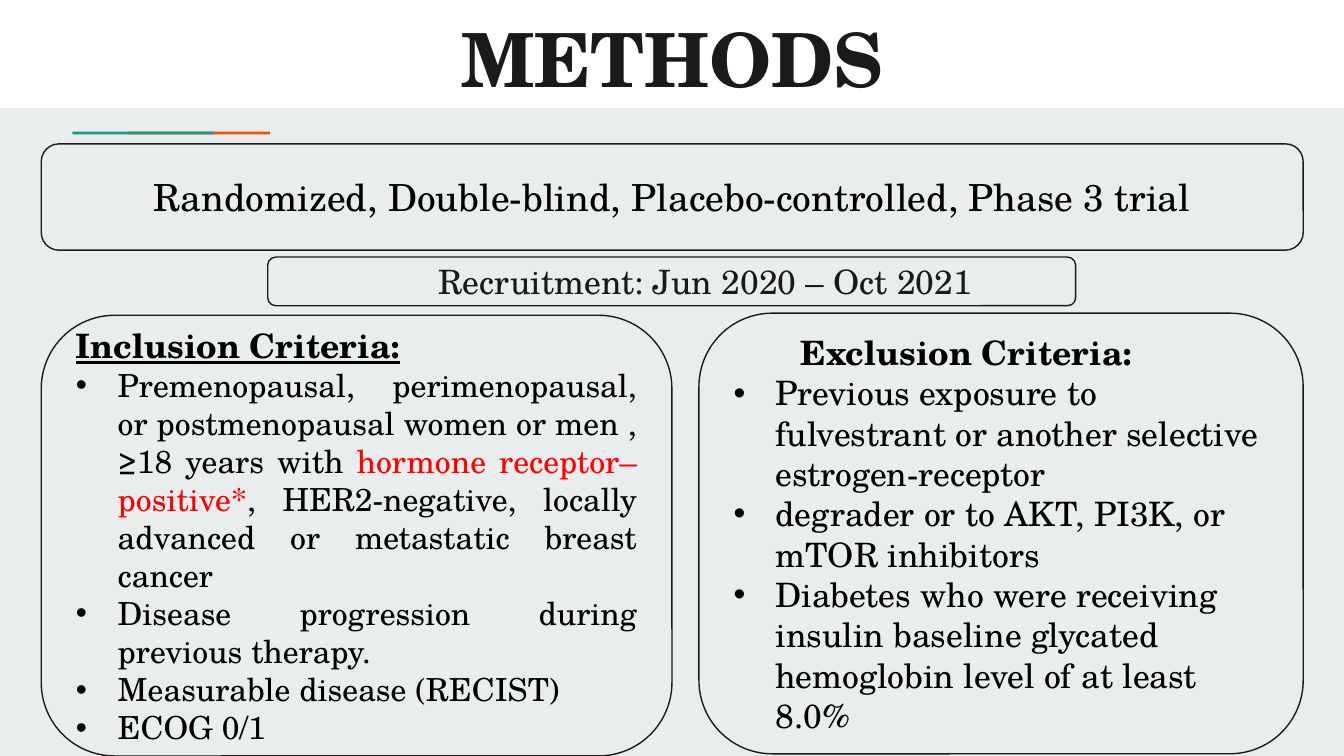
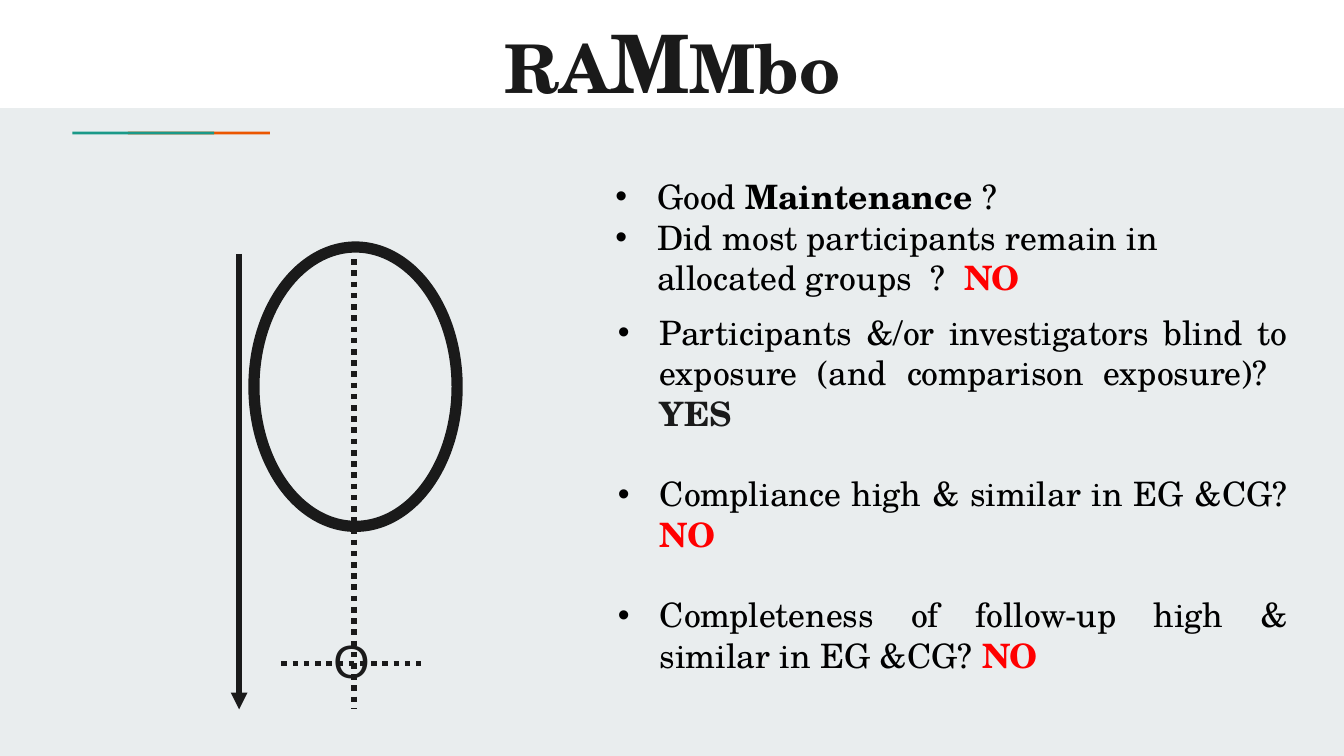
from lxml import etree
from pptx import Presentation
from pptx.dml.color import RGBColor
from pptx.enum.dml import MSO_LINE
from pptx.enum.shapes import MSO_CONNECTOR, MSO_SHAPE
from pptx.enum.text import MSO_ANCHOR, PP_ALIGN
from pptx.oxml.ns import qn
from pptx.util import Cm, Pt

RECT, ROUND, OVAL = MSO_SHAPE.RECTANGLE, MSO_SHAPE.ROUNDED_RECTANGLE, MSO_SHAPE.OVAL
LEFT, CENTER, JUSTIFY = PP_ALIGN.LEFT, PP_ALIGN.CENTER, PP_ALIGN.JUSTIFY
TOP, MIDDLE = MSO_ANCHOR.TOP, MSO_ANCHOR.MIDDLE
STRAIGHT, DOTS = MSO_CONNECTOR.STRAIGHT, MSO_LINE.ROUND_DOT

SERIF, SANS = "TeX Gyre Schola", "Arial"
INK, BLACK, RED, WHITE = "1A1A1A", "000000", "FF0000", "FFFFFF"
PALE, TEAL, ORANGE = "E9EDEE", "1A9988", "EB5600"
WIDTH, HEIGHT = 25.4, 14.29
HANG = 0.79
BLANK_LINE = 21.6


def rgb(color):
    return RGBColor.from_string(color)


def add_shape(s, kind, box, fill=None, line=None, weight=0.75):
    sp = s.shapes.add_shape(kind, *map(Cm, box))
    sp.shadow.inherit = False
    if fill:
        sp.fill.solid()
        sp.fill.fore_color.rgb = rgb(fill)
    else:
        sp.fill.background()
    if line:
        sp.line.color.rgb = rgb(line)
        sp.line.width = Pt(weight)
    else:
        sp.line.fill.background()
    return sp


def set_frame(sp, anchor=TOP, x=0.25, y=0.25, wrap=True):
    tf = sp.text_frame
    tf.word_wrap = wrap
    tf.vertical_anchor = anchor
    tf.margin_left = tf.margin_right = Cm(x)
    tf.margin_top = tf.margin_bottom = Cm(y)
    return tf


def add_text(s, box, **frame):
    return set_frame(s.shapes.add_textbox(*map(Cm, box)), **frame)


def add_run(p, text, size=18, color=BLACK, bold=False, underline=False, font=SERIF):
    r = p.add_run()
    r.text = text
    r.font.name = font
    r.font.size = Pt(size)
    r.font.bold = bold
    r.font.underline = underline
    r.font.color.rgb = rgb(color)


def add_paragraph(tf, align=LEFT, left=0, before=0):
    p = tf.paragraphs[0]
    if p.runs:
        p = tf.add_paragraph()
    p.alignment = align
    p.space_before = Pt(before)
    p._p.get_or_add_pPr().set("marL", str(Cm(left)))
    return p


def add_bullet(tf, runs, align=LEFT, size=18, before=0):
    """Add a hanging bullet; each run is (text, colour, bold)."""
    p = add_paragraph(tf, align, HANG, before)
    pPr = p._p.get_or_add_pPr()
    pPr.set("indent", str(-Cm(HANG)))
    clr = etree.SubElement(pPr, qn("a:buClr"))
    etree.SubElement(clr, qn("a:srgbClr"), val=BLACK)
    etree.SubElement(pPr, qn("a:buFont"), typeface=SANS)
    etree.SubElement(pPr, qn("a:buChar"), char="•")
    for text, color, bold in runs:
        add_run(p, text, size, color, bold)


def add_line(s, x1, y1, x2, y2, dotted=False, arrow=False):
    line = s.shapes.add_connector(STRAIGHT, Cm(x1), Cm(y1), Cm(x2), Cm(y2))
    line.line.color.rgb = rgb(INK)
    line.line.width = Pt(3)
    if dotted:
        line.line.dash_style = DOTS
    if arrow:
        etree.SubElement(line.line._get_or_add_ln(), qn("a:tailEnd"), type="triangle")
    etree.SubElement(line._element.spPr, qn("a:effectLst"))


def add_slide(prs, title):
    """Start a slide with its band, accent rule and title of (text, size) runs."""
    s = prs.slides.add_slide(prs.slide_layouts[6])
    s.background.fill.solid()
    s.background.fill.fore_color.rgb = rgb(PALE)
    add_shape(s, RECT, (0, 0, WIDTH, 2.04), WHITE)
    for x, color in ((2.42, ORANGE), (1.37, TEAL)):
        add_shape(s, RECT, (x, 2.49, 2.68, 0.05), color)
    p = add_paragraph(add_text(s, (2.03, 0, 21.36, 2.29)), CENTER)
    for text, size in title:
        add_run(p, text, size, INK, True)
    return s


def panel(s, box):
    return set_frame(add_shape(s, ROUND, box, PALE, INK), MIDDLE)


def banner(s, box, text, size, color, left=0):
    add_run(add_paragraph(panel(s, box), CENTER, left), text, size, color)


def criteria(s, box, heading, items, size=18, align=LEFT, left=0, underline=False):
    tf = panel(s, box)
    add_run(add_paragraph(tf, left=left), heading, 18, BLACK, True, underline)
    for runs in items:
        add_bullet(tf, runs, align, size)


def flow_diagram(s, x, y):
    """Draw the participant oval, time arrow and outcome cross from (x, y)."""
    bottom = y + 8.74
    axis, cross = x + 2.17, y + 7.87
    add_line(s, x, y + 0.13, x, bottom, arrow=True)
    add_shape(s, OVAL, (x + 0.28, y, 3.84, 5.28), line=INK, weight=6)
    add_line(s, axis, y + 0.23, axis, bottom, dotted=True)
    add_line(s, x + 0.8, cross, x + 3.43, cross, dotted=True)
    tf = add_text(s, (x + 1.58, cross - 0.69, 0.99, 1.27), x=0.2, y=0.1, wrap=False)
    add_run(add_paragraph(tf), "O", 25, INK, font=SANS)


def questions(s, box, items, align=LEFT, gap=0, x=0.2, y=0.1):
    tf = add_text(s, box, x=x, y=y)
    for i, runs in enumerate(items):
        add_bullet(tf, runs, align, before=gap if i else 0)


def methods_slide(prs):
    s = add_slide(prs, [("METHODS", 40)])
    banner(s, (0.78, 2.72, 23.85, 2.01),
           "Randomized, Double-blind, Placebo-controlled, Phase 3 trial", 20, BLACK)
    banner(s, (5.06, 4.86, 15.27, 0.92),
           "Recruitment: Jun 2020 – Oct 2021", 18, INK, 1.27)
    criteria(s, (0.78, 5.96, 11.92, 8.33), "Inclusion Criteria:", [
        [("Premenopausal, perimenopausal, or postmenopausal women or men , "
          "≥18 years with ", BLACK, False),
         ("hormone receptor– positive*", RED, False),
         (", HER2-negative, locally advanced or metastatic breast cancer", BLACK, False)],
        [("Disease progression during previous therapy.", BLACK, False)],
        [("Measurable disease (RECIST)", BLACK, False)],
        [("ECOG 0/1", BLACK, False)],
    ], size=17, align=JUSTIFY, underline=True)
    criteria(s, (13.21, 5.92, 11.42, 8.33), "Exclusion Criteria:", [
        [("Previous exposure to fulvestrant or another selective estrogen-receptor",
          BLACK, False)],
        [("degrader or to AKT, PI3K, or mTOR inhibitors", BLACK, False)],
        [("Diabetes who were receiving insulin baseline glycated hemoglobin level "
          "of at least 8.0%", BLACK, False)],
    ], left=1.27)


def rammbo_slide(prs):
    s = add_slide(prs, [("RA", 36), ("M", 43.2), ("Mbo", 36)])
    flow_diagram(s, 4.52, 4.67)
    no = ("NO", RED, True)
    questions(s, (11.43, 3.23, 12.14, 2.51), [
        [("Good ", BLACK, False), ("Maintenance ", BLACK, True), ("?", BLACK, False)],
        [("Did most participants remain in allocated groups  ?  ", BLACK, False), no],
    ])
    questions(s, (11.43, 5.77, 13.16, 7.77), [
        [("Participants &/or investigators blind to exposure "
          "(and comparison exposure)?  ", BLACK, False), ("YES", INK, True)],
        [("Compliance high & similar in EG &CG? ", BLACK, False), no],
        [("Completeness of follow-up high & similar in EG &CG? ", BLACK, False), no],
    ], JUSTIFY, BLANK_LINE, x=0.25, y=0.13)


def main():
    prs = Presentation()
    prs.slide_width, prs.slide_height = Cm(WIDTH), Cm(HEIGHT)
    methods_slide(prs)
    rammbo_slide(prs)
    prs.save("out.pptx")


if __name__ == "__main__":
    main()
